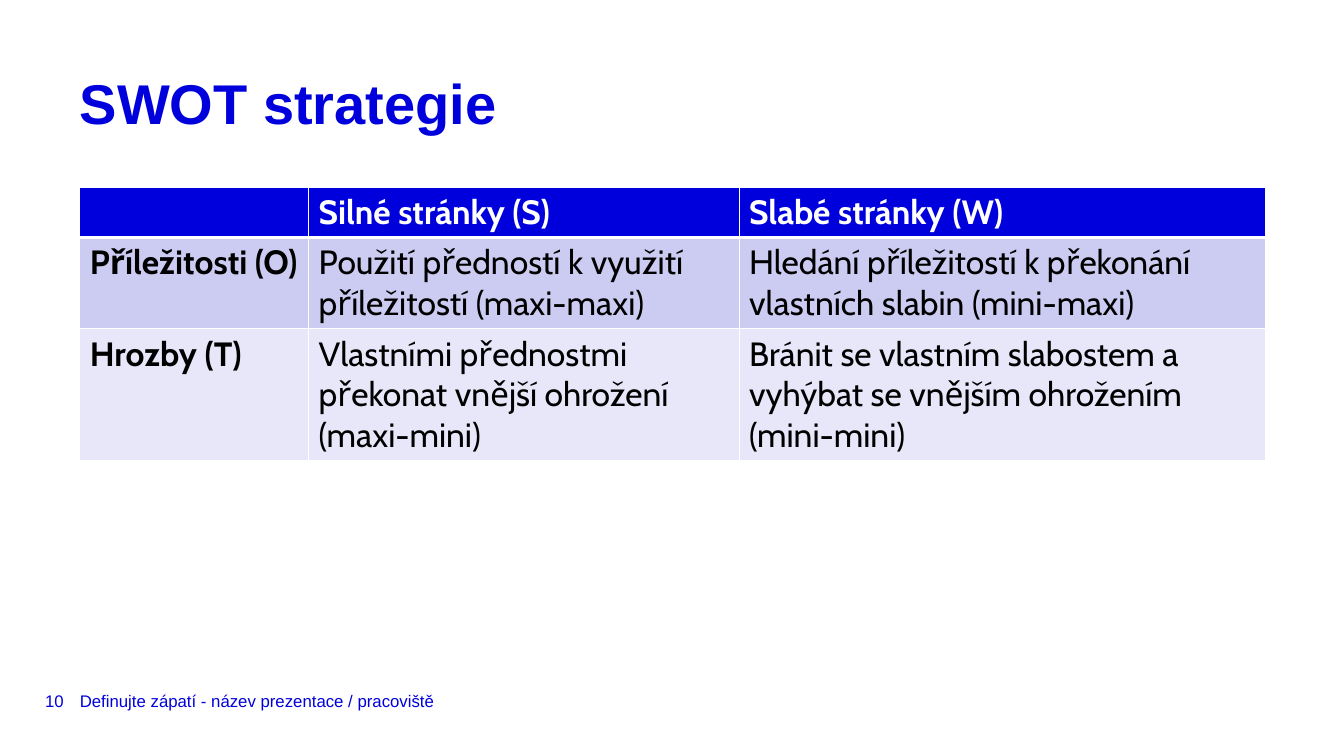
from dataclasses import dataclass

import lxml.etree
import pptx
import pptx.dml.color
import pptx.enum.text
import pptx.oxml.ns
import pptx.slide
import pptx.table
import pptx.text.text
import pptx.util

PX = 9525
COLORS = {
    "blue": "0000DC",
    "white": "FFFFFF",
    "black": "000000",
    "band_dark": "CCCCF2",
    "band_light": "E7E7F9",
}


@dataclass(frozen=True)
class Style:
    font: str
    size: int
    color: str
    bold: bool = False


@dataclass(frozen=True)
class Label:
    text: str
    left: int
    top: int
    width: int
    height: int
    style: Style
    anchor: pptx.enum.text.MSO_ANCHOR
    wrap: bool = True
    line_points: int | None = None


@dataclass(frozen=True)
class StrategyRow:
    height: int
    fill: str
    text_color: str
    texts: tuple[str, str, str]


FOOTER = Style("Arial", 12, "blue")
TOP = pptx.enum.text.MSO_ANCHOR.TOP
MIDDLE = pptx.enum.text.MSO_ANCHOR.MIDDLE
LABELS = (
    Label("Definujte zápatí - název prezentace / pracoviště", 76, 654, 831, 27, FOOTER, MIDDLE),
    Label("10", 43, 654, 27, 27, FOOTER, MIDDLE, wrap=False),
    Label("SWOT strategie", 76, 76, 1129, 47, Style("Arial", 40, "blue", True), TOP, line_points=40),
)
TABLE_LEFT, TABLE_TOP = 76, 178
COLUMN_WIDTHS = (218, 410, 501)
ROWS = (
    StrategyRow(48, "blue", "white", ("", "Silné stránky (S)", "Slabé stránky (W)")),
    StrategyRow(87, "band_dark", "black", (
        "Příležitosti (O)",
        "Použití předností k využití příležitostí (maxi-maxi)",
        "Hledání příležitostí k překonání vlastních slabin (mini-maxi)",
    )),
    StrategyRow(126, "band_light", "black", (
        "Hrozby (T)",
        "Vlastními přednostmi překonat vnější ohrožení (maxi-mini)",
        "Bránit se vlastním slabostem a vyhýbat se vnějším ohrožením (mini-mini)",
    )),
)


def px(length: int) -> pptx.util.Emu:
    return pptx.util.Emu(length * PX)


def rgb(name: str) -> pptx.dml.color.RGBColor:
    return pptx.dml.color.RGBColor.from_string(COLORS[name])


def add_span(para: pptx.text.text._Paragraph, text: str, style: Style) -> None:
    span = para.add_run()
    span.text = text
    span.font.name = style.font
    span.font.size = pptx.util.Pt(style.size)
    span.font.bold = style.bold
    span.font.color.rgb = rgb(style.color)


def add_label(page: pptx.slide.Slide, label: Label) -> None:
    box = page.shapes.add_textbox(px(label.left), px(label.top), px(label.width), px(label.height))
    frame = box.text_frame
    frame.margin_left = frame.margin_right = frame.margin_top = frame.margin_bottom = 0
    frame.word_wrap = label.wrap
    frame.vertical_anchor = label.anchor
    para = frame.paragraphs[0]
    if label.line_points:
        para.line_spacing = pptx.util.Pt(label.line_points)
    add_span(para, label.text, label.style)


def add_borders(cell: pptx.table._Cell, widths: dict[str, int]) -> None:
    properties = cell._tc.get_or_add_tcPr()
    qn = pptx.oxml.ns.qn
    for position, (side, points) in enumerate(widths.items()):
        line = lxml.etree.Element(qn(f"a:ln{side}"), w=str(pptx.util.Pt(points)))
        fill = lxml.etree.SubElement(line, qn("a:solidFill"))
        lxml.etree.SubElement(fill, qn("a:srgbClr"), val=COLORS["white"])
        properties.insert(position, line)


def add_strategy_table(page: pptx.slide.Slide) -> None:
    width = sum(COLUMN_WIDTHS)
    height = sum(row.height for row in ROWS)
    table = page.shapes.add_table(
        len(ROWS), len(COLUMN_WIDTHS), px(TABLE_LEFT), px(TABLE_TOP), px(width), px(height)
    ).table
    for column, column_width in zip(table.columns, COLUMN_WIDTHS):
        column.width = px(column_width)
    for row_index, row in enumerate(ROWS):
        table.rows[row_index].height = px(row.height)
        for column_index, text in enumerate(row.texts):
            cell = table.cell(row_index, column_index)
            cell.fill.solid()
            cell.fill.fore_color.rgb = rgb(row.fill)
            top = 3 if row_index == 1 else 1
            bottom = 3 if row_index == 0 else 1
            add_borders(cell, {"L": 1, "R": 1, "T": top, "B": bottom})
            if text:
                bold = row_index == 0 or column_index == 0
                add_span(cell.text_frame.paragraphs[0], text, Style("Cabin", 24, row.text_color, bold))


def main() -> None:
    deck = pptx.Presentation()
    deck.slide_width, deck.slide_height = px(1280), px(720)
    page = deck.slides.add_slide(deck.slide_layouts[6])
    for label in LABELS:
        add_label(page, label)
    add_strategy_table(page)
    deck.save("out.pptx")


if __name__ == "__main__":
    main()
